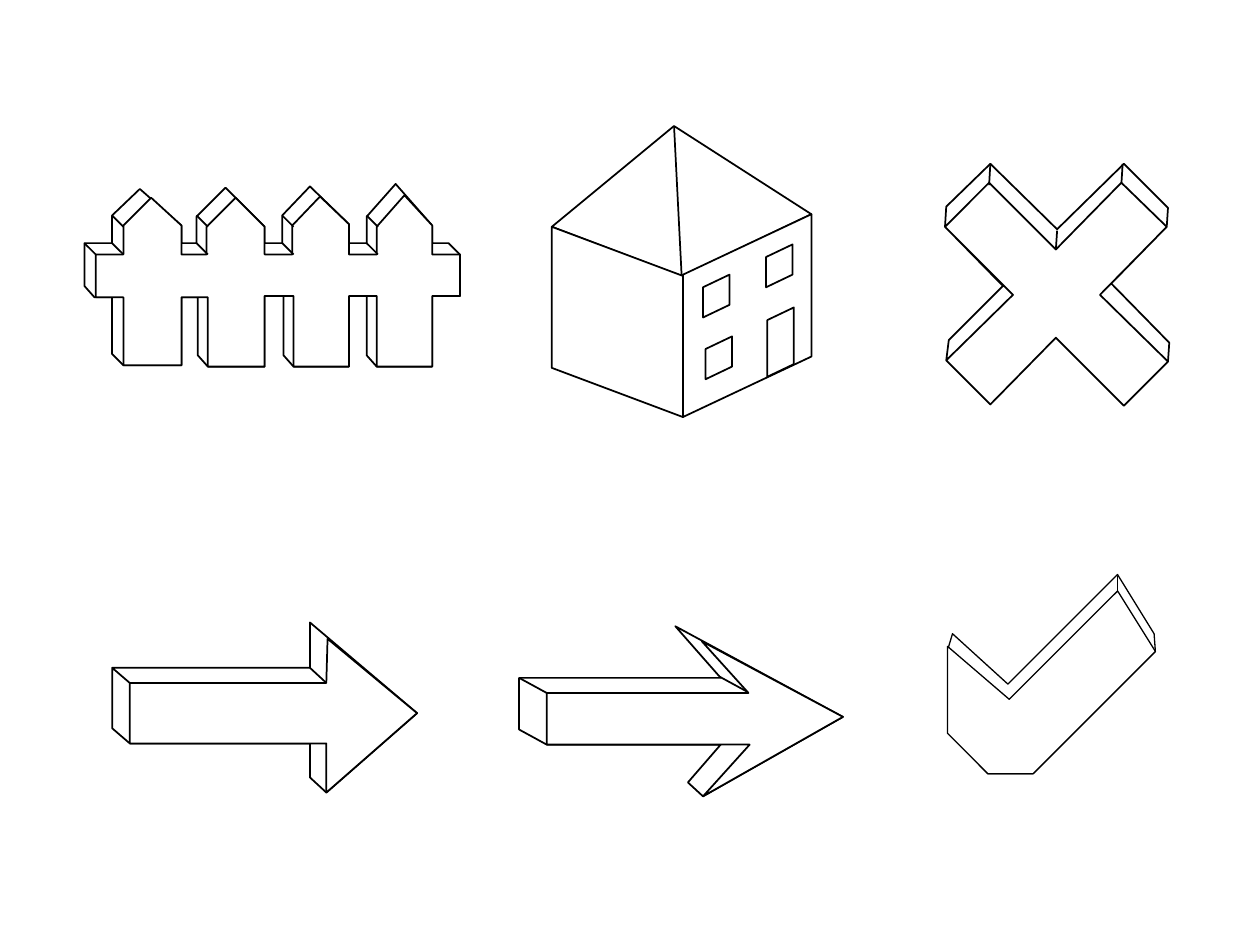
"""Builds a slide with six outlined solids: fence, house, cross, two arrows and a check mark."""
from dataclasses import dataclass, field

from lxml.etree import SubElement
from pptx import Presentation
from pptx.dml.color import RGBColor
from pptx.enum.shapes import MSO_CONNECTOR as Connector
from pptx.oxml.ns import qn
from pptx.slide import Slide
from pptx.util import Pt

PX = 9144
SLIDE_SIZE = (1000, 750)
FACE, EDGE = "FFFFFF", "000000"
Point = tuple[int, int]


@dataclass
class Face:
    points: list[Point]
    closed: bool = True


@dataclass
class Solid:
    faces: list[Face]
    edges: list[tuple[Point, Point]] = field(default_factory=list)
    weight: float = 1


def color(value: str) -> RGBColor:
    return RGBColor.from_string(value)


def wall_opening(left: int, top: int, height: int) -> Face:
    """Return a window or door slanted along the right wall of the house."""
    right, rise = left + 21, 10
    return Face([(right, top - rise + height), (left, top + height), (left, top), (right, top - rise)])


def depth_edge(left: int, top: int, depth: int = 9) -> tuple[Point, Point]:
    return (left, top), (left + depth, top + depth)


def draw_face(slide: Slide, face: Face, weight: float) -> None:
    start, *rest = face.points
    builder = slide.shapes.build_freeform(*start, scale=PX)
    builder.add_line_segments(rest, close=face.closed)
    shape = builder.convert_to_shape()
    shape.shadow.inherit = False
    shape.fill.solid()
    shape.fill.fore_color.rgb = color(FACE)
    shape.line.color.rgb = color(EDGE)
    shape.line.width = Pt(weight)


def draw_edge(slide: Slide, start: Point, end: Point, weight: float) -> None:
    lengths = [value * PX for value in (*start, *end)]
    connector = slide.shapes.add_connector(Connector.STRAIGHT, *lengths)
    connector.line.color.rgb = color(EDGE)
    connector.line.width = Pt(weight)
    SubElement(connector._element.spPr, qn("a:effectLst"))


def draw_solid(slide: Slide, solid: Solid) -> None:
    for face in solid.faces:
        draw_face(slide, face, solid.weight)
    for start, end in solid.edges:
        draw_edge(slide, start, end, solid.weight)


PICKET_LEFTS = (89, 156, 224, 291)

FENCE = Solid(
    [
        Face([
            (111, 150), (89, 171), (89, 193), (67, 193), (67, 227), (75, 236), (89, 236), (89, 281),
            (98, 290), (144, 290), (144, 236), (157, 236), (157, 282), (165, 291), (210, 291),
            (210, 235), (225, 235), (225, 282), (233, 291), (277, 291), (277, 235), (291, 235),
            (291, 282), (299, 291), (343, 291), (343, 235), (365, 235), (365, 202), (356, 193),
            (343, 193), (343, 179), (314, 146), (291, 172), (291, 193), (277, 193), (277, 178),
            (246, 148), (224, 171), (224, 193), (210, 193), (210, 180), (179, 149), (156, 172),
            (156, 193), (144, 193), (144, 179),
        ]),
        Face([
            (120, 157), (98, 179), (98, 202), (76, 202), (76, 236), (98, 236), (98, 290), (144, 290),
            (144, 236), (165, 236), (165, 291), (210, 291), (210, 235), (233, 235), (233, 291),
            (277, 291), (277, 235), (299, 235), (299, 291), (343, 291), (343, 235), (365, 235),
            (365, 202), (343, 202), (343, 179), (321, 155), (299, 180), (299, 202), (277, 202),
            (277, 178), (254, 156), (232, 179), (232, 202), (210, 202), (210, 180), (187, 157),
            (164, 180), (164, 202), (144, 202), (144, 179),
        ]),
    ],
    [depth_edge(left, 171) for left in PICKET_LEFTS]
    + [depth_edge(left, 193) for left in (67, *PICKET_LEFTS)],
)

HOUSE = Solid(
    [
        Face([(535, 100), (438, 180), (541, 219), (644, 170)]),
        Face([(542, 331), (438, 292), (438, 180), (542, 219)]),
        Face([(644, 283), (542, 331), (542, 218), (644, 170)]),
        wall_opening(558, 228, 24),
        wall_opening(560, 277, 24),
        wall_opening(609, 254, 45),
        wall_opening(608, 204, 24),
    ],
    [((535, 101), (541, 219))],
)

CROSS = Solid(
    [
        Face([
            (750, 180), (751, 164), (786, 130), (839, 182), (892, 130), (927, 165), (926, 180),
            (882, 225), (928, 272), (927, 287), (892, 322), (838, 268), (786, 321), (751, 286),
            (753, 270), (796, 227), (750, 180), (785, 145), (838, 198), (890, 145), (926, 180),
            (873, 234), (927, 287), (892, 322), (838, 268), (786, 321), (751, 286), (804, 234),
        ]),
    ],
    [((786, 130), (785, 147)), ((839, 183), (838, 198)), ((891, 130), (890, 146))],
)

BLOCK_ARROW = Solid(
    [
        Face([
            (89, 530), (89, 578), (103, 590), (246, 590), (246, 617), (259, 629), (331, 566),
            (246, 494), (246, 530), (89, 530), (103, 542),
        ], closed=False),
        Face([
            (103, 542), (103, 590), (259, 590), (259, 629), (331, 566), (260, 507), (259, 542),
        ]),
    ],
    [((246, 530), (259, 542))],
)

BARBED_ARROW = Solid(
    [
        Face([
            (412, 538), (572, 538), (536, 497), (669, 569), (558, 632), (546, 621), (572, 591),
            (434, 591), (412, 579),
        ]),
        Face([
            (434, 550), (594, 550), (557, 509), (669, 569), (558, 632), (595, 591), (434, 591),
        ]),
    ],
    [((412, 538), (434, 550)), ((571, 537), (593, 549))],
)

CHECK_MARK = Solid(
    [
        Face([
            (784, 614), (820, 614), (917, 517), (916, 503), (887, 456), (800, 543), (756, 503),
            (753, 513), (753, 582),
        ]),
        Face([
            (784, 614), (820, 614), (917, 517), (887, 469), (801, 555), (752, 513), (752, 582),
        ]),
    ],
    [((887, 457), (887, 469))],
    weight=0.75,
)


def main() -> None:
    presentation = Presentation()
    presentation.slide_width, presentation.slide_height = (side * PX for side in SLIDE_SIZE)
    slide = presentation.slides.add_slide(presentation.slide_layouts[6])
    for solid in (FENCE, BLOCK_ARROW, BARBED_ARROW, HOUSE, CROSS, CHECK_MARK):
        draw_solid(slide, solid)
    presentation.save("out.pptx")


if __name__ == "__main__":
    main()
